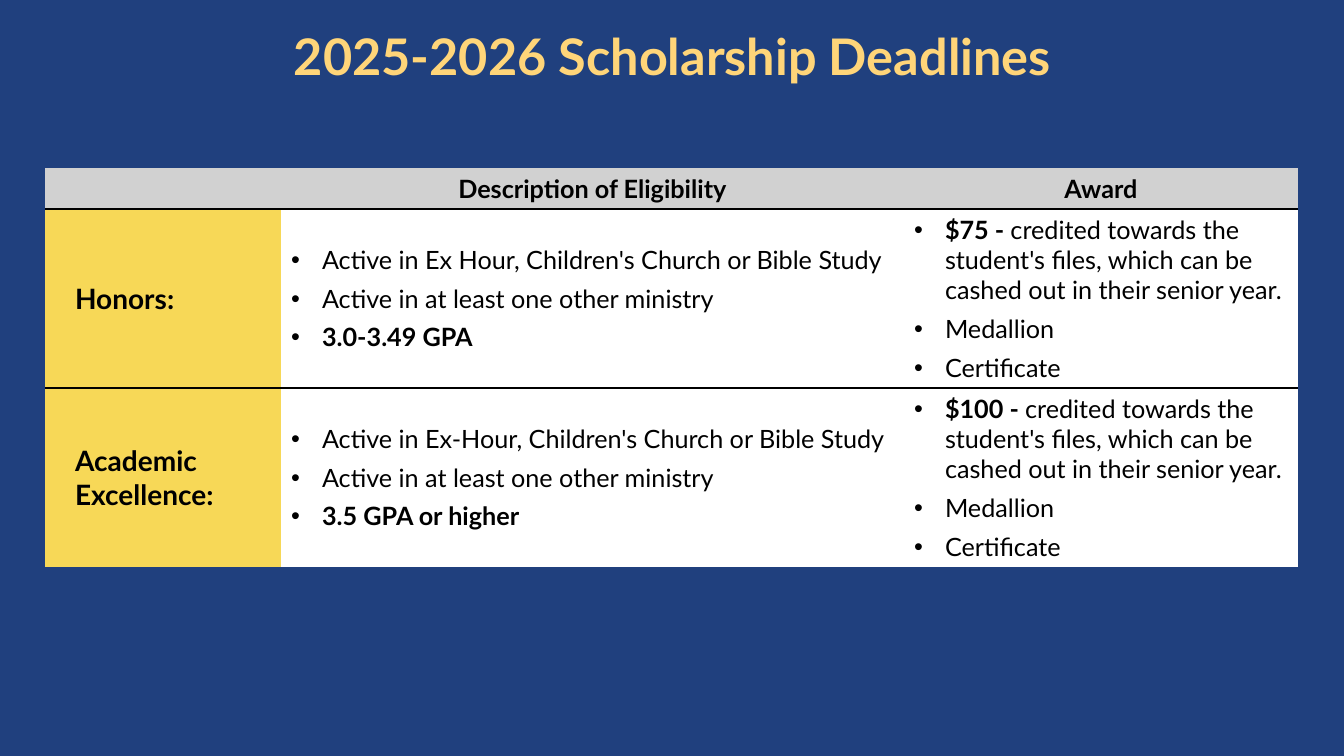
"""Build the scholarship deadlines slide with its eligibility and award table."""
import pptx
import pptx.util
import pptx.dml.color
import pptx.enum.text
import pptx.oxml
import pptx.oxml.ns

TITLE = "2025-2026 Scholarship Deadlines"
HEADINGS = ["", "Description of Eligibility", "Award"]
MINISTRY = "Active in at least one other ministry"
CREDIT = "credited towards the student's files, which can be cashed out in their senior year."
SCHOLARSHIPS = [
    ("Honors:", "Active in Ex Hour, Children's Church or Bible Study", "3.0-3.49 GPA", "$75 - "),
    ("Academic Excellence:", "Active in Ex-Hour, Children's Church or Bible Study",
     "3.5 GPA or higher", "$100 - "),
]
TITLE_BOX = (93, 34, 1159, 50)
TABLE_CORNER = (45, 168)
COLUMN_WIDTHS = [236, 623, 394]
ROW_HEIGHTS = [41, 179, 179]
NAME_INDENT, BULLET_INDENT = 20, 31
FONT = "Lato"
NAVY, GOLD, GREY, YELLOW, WHITE, BLACK = "20407E", "FFD579", "D1D1D1", "F7D857", "FFFFFF", "000000"
NO_STYLE = "{2D5ABB26-0587-4C30-8999-92F81FD0307C}"
MIDDLE = pptx.enum.text.MSO_ANCHOR.MIDDLE
CENTER = pptx.enum.text.PP_ALIGN.CENTER
LEFT = pptx.enum.text.PP_ALIGN.LEFT


def px(length):
    return round(length * 914400 / 100.8)


def color(code):
    return pptx.dml.color.RGBColor.from_string(code)


def add_xml(parent, tag, inner="", **attributes):
    listed = " ".join(f'{name}="{value}"' for name, value in attributes.items())
    namespace = pptx.oxml.ns.nsdecls("a")
    parent.append(pptx.oxml.parse_xml(f"<a:{tag} {namespace} {listed}>{inner}</a:{tag}>"))


def set_font(font, size, code, bold=None):
    font.name, font.size, font.bold = FONT, pptx.util.Pt(size), bold
    font.color.rgb = color(code)


def fill_cell(cell, fill, edges):
    for edge in edges:
        add_xml(cell._tc.get_or_add_tcPr(), edge,
                f'<a:solidFill><a:srgbClr val="{BLACK}"/></a:solidFill>', w=pptx.util.Pt(1))
    cell.fill.solid()
    cell.fill.fore_color.rgb = color(fill)
    cell.vertical_anchor = MIDDLE


def write_line(cell, text, size, align=LEFT, indent=0):
    para = cell.text_frame.paragraphs[0]
    para.text, para.alignment = text, align
    para._p.get_or_add_pPr().set("marL", str(px(indent)))
    set_font(para.font, size, BLACK, True)


def write_bullets(cell, items):
    frame = cell.text_frame
    for index, spans in enumerate(items):
        para = frame.add_paragraph() if index else frame.paragraphs[0]
        para.space_after = pptx.util.Pt(6)
        properties = para._p.get_or_add_pPr()
        properties.set("marL", str(px(BULLET_INDENT)))
        properties.set("indent", str(-px(BULLET_INDENT)))
        add_xml(properties, "buFont", typeface="Arial")
        add_xml(properties, "buChar", char="•")
        set_font(para.font, 18, BLACK)
        for text, bold in spans:
            span = para.add_run()
            span.text, span.font.bold = text, bold


def add_title(page):
    title = page.shapes.title
    title.left, title.top, title.width, title.height = map(px, TITLE_BOX)
    frame = title.text_frame
    frame.text, frame.vertical_anchor = TITLE, MIDDLE
    frame.auto_size = pptx.enum.text.MSO_AUTO_SIZE.NONE
    para = frame.paragraphs[0]
    para.alignment, para.line_spacing = CENTER, 0.9
    set_font(para.font, 36, GOLD, True)


def add_scholarships(page):
    size = px(sum(COLUMN_WIDTHS)), px(sum(ROW_HEIGHTS))
    table = page.shapes.add_table(len(ROW_HEIGHTS), len(COLUMN_WIDTHS),
                                  *map(px, TABLE_CORNER), *size).table
    table.horz_banding = table.first_row = False
    table._tbl.tblPr.find(pptx.oxml.ns.qn("a:tableStyleId")).text = NO_STYLE
    for column, width in zip(table.columns, COLUMN_WIDTHS):
        column.width = px(width)
    for row, height in zip(table.rows, ROW_HEIGHTS):
        row.height = px(height)
    for column, heading in enumerate(HEADINGS):
        cell = table.cell(0, column)
        write_line(cell, heading, 18, CENTER)
        fill_cell(cell, GREY, ["lnB"])
    for row, (name, activity, grade, amount) in enumerate(SCHOLARSHIPS, 1):
        cells = [table.cell(row, column) for column in range(len(HEADINGS))]
        write_line(cells[0], name, 20, indent=NAME_INDENT)
        write_bullets(cells[1], [[(activity, False)], [(MINISTRY, False)], [(grade, True)]])
        write_bullets(cells[2], [[(amount, True), (CREDIT, False)],
                                 [("Medallion", False)], [("Certificate", False)]])
        edges = ["lnT", "lnB"] if row < len(SCHOLARSHIPS) else ["lnT"]
        for cell, fill in zip(cells, [YELLOW, WHITE, WHITE]):
            fill_cell(cell, fill, edges)


def main():
    deck = pptx.Presentation()
    deck.slide_width, deck.slide_height = px(1344), px(756)
    page = deck.slides.add_slide(deck.slide_layouts[5])
    page.background.fill.solid()
    page.background.fill.fore_color.rgb = color(NAVY)
    add_title(page)
    add_scholarships(page)
    deck.save("out.pptx")


if __name__ == "__main__":
    main()
